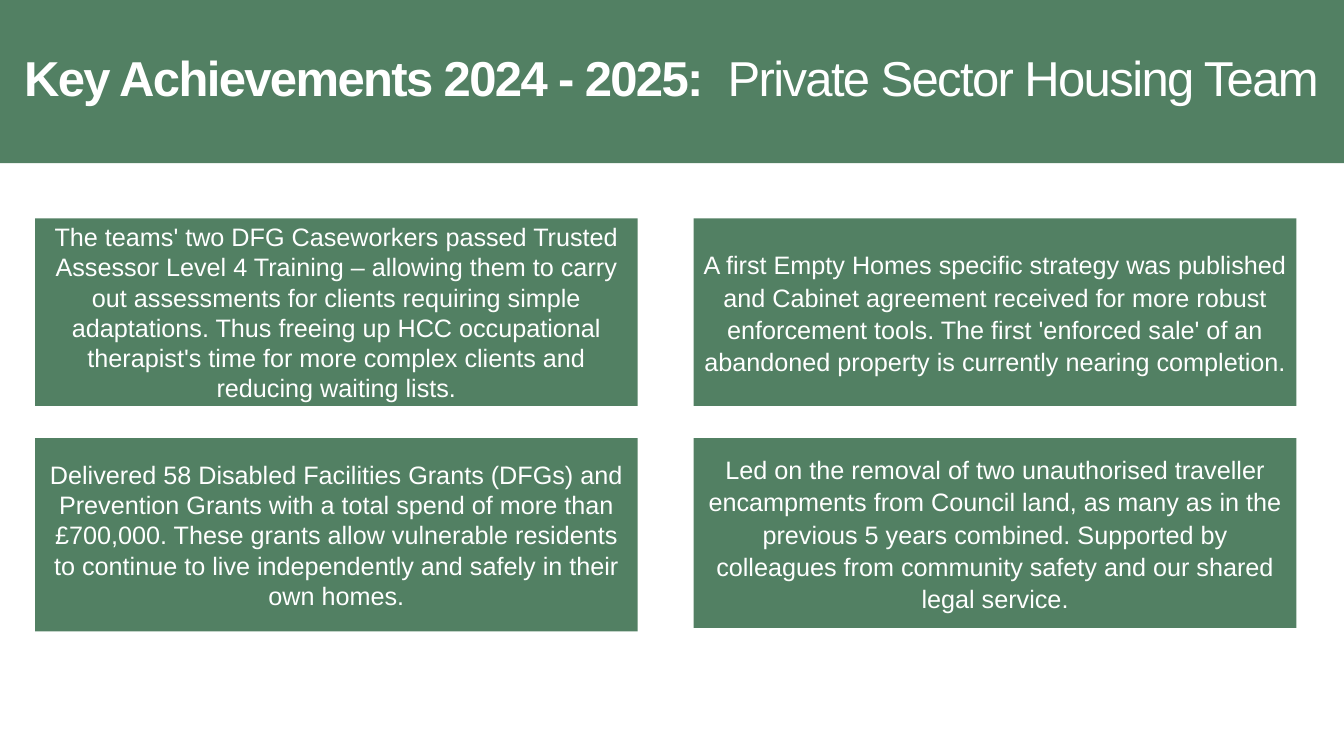
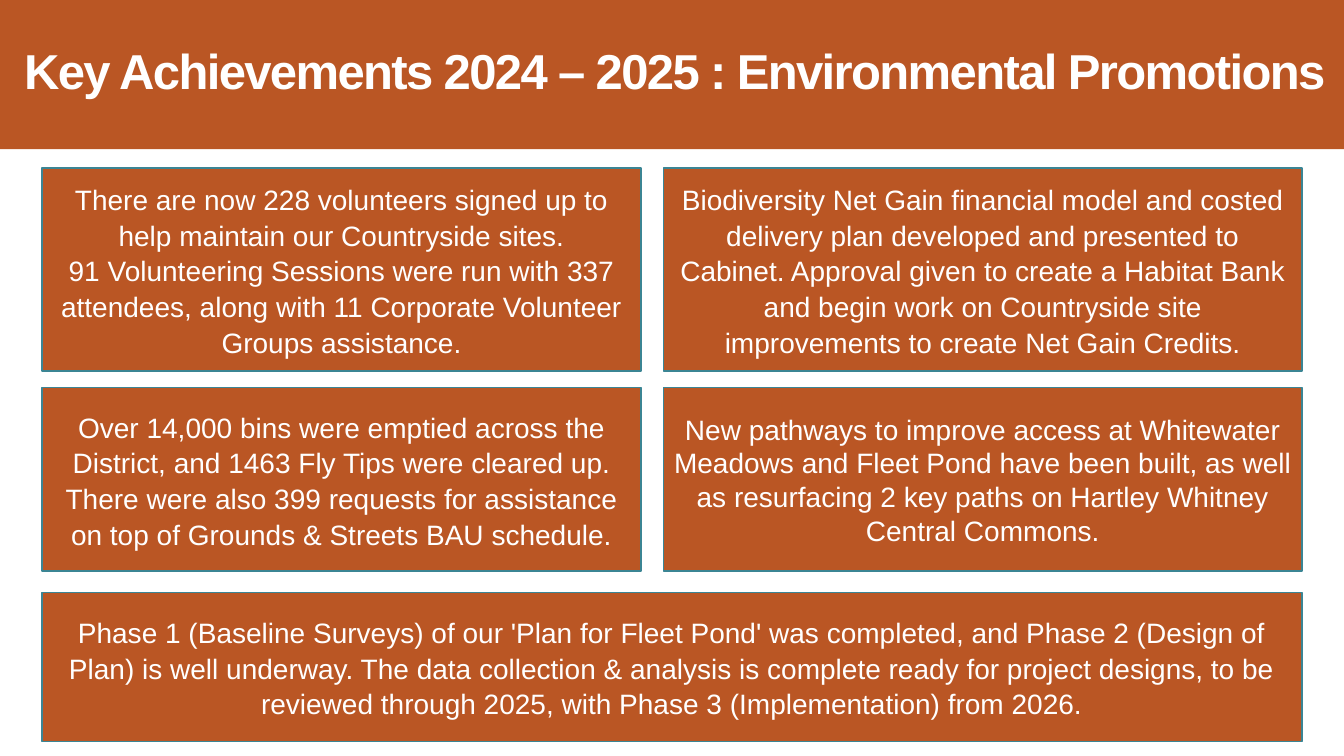
from collections import namedtuple
from pptx import Presentation
from pptx.dml.color import RGBColor
from pptx.enum.shapes import MSO_SHAPE as Preset
from pptx.enum.text import MSO_ANCHOR as Anchor, MSO_AUTO_SIZE as AutoSize, PP_ALIGN as Align
from pptx.util import Pt

COLORS = {"housing": "528063", "environment": "BA5624", "outline": "3B8594", "text": "FFFFFF"}
FONT = "Arial"
WIDTH, HEIGHT = 960, 540
TITLE_ONLY = 5

Box = namedtuple("Box", "left top width height")
Style = namedtuple("Style", "fill outline size")
Spacing = namedtuple("Spacing", "line after")

SINGLE = Spacing(1.0, 0)
RELAXED = Spacing(1.07, 8)
FIXED = Spacing(Pt(25.5), 0)


def rgb(name):
    return RGBColor.from_string(COLORS[name])


def add_run(paragraph, text, size, bold=False):
    run = paragraph.add_run()
    run.text = text
    run.font.name = FONT
    run.font.size = Pt(size)
    run.font.bold = bold
    run.font.color.rgb = rgb("text")
    return run


def add_panel(slide, box, fill, outline=None):
    panel = slide.shapes.add_shape(Preset.RECTANGLE, *map(Pt, box))
    panel.shadow.inherit = False
    panel.fill.solid()
    panel.fill.fore_color.rgb = rgb(fill)
    if outline:
        panel.line.color.rgb = rgb(outline)
        panel.line.width = Pt(1)
    else:
        panel.line.fill.background()
    return panel


def add_header(slide, box, fill, title_parts):
    band = add_panel(slide, box, fill)
    title = slide.shapes.title
    title.element.addprevious(band.element)
    title.left, title.top = Pt(box.left + 10), Pt(box.top + 6.5)
    title.width, title.height = Pt(box.width - 10), Pt(box.height - 13)
    frame = title.text_frame
    frame.auto_size = AutoSize.NONE
    frame.word_wrap = True
    frame.vertical_anchor = Anchor.MIDDLE
    heading = frame.paragraphs[0]
    heading.alignment = Align.LEFT
    heading.line_spacing = 0.85
    for text, bold in title_parts:
        run = add_run(heading, text, 35, bold)
        run.font._element.set("spc", "-120")


def add_card(slide, box, style, spacing, *texts):
    frame = add_panel(slide, box, style.fill, style.outline).text_frame
    frame.word_wrap = True
    frame.vertical_anchor = Anchor.MIDDLE
    for index, text in enumerate(texts):
        paragraph = frame.add_paragraph() if index else frame.paragraphs[0]
        paragraph.alignment = Align.CENTER
        paragraph.line_spacing = spacing.line
        paragraph.space_after = Pt(spacing.after)
        add_run(paragraph, text, style.size)


def add_achievements(deck, header_height, style, title_parts, cards):
    slide = deck.slides.add_slide(deck.slide_layouts[TITLE_ONLY])
    add_header(slide, Box(0, 0, WIDTH, header_height), style.fill, title_parts)
    for box, spacing, *texts in cards:
        add_card(slide, box, style, spacing, *texts)


def add_housing(deck, area):
    card_width = (area.width - 40) / 2
    right = area.left + card_width + 40
    lower = area.top + 157
    add_achievements(
        deck, 116.5, Style("housing", None, 18),
        [("Key Achievements 2024 - 2025:  ", True), ("Private Sector Housing Team", False)],
        [
            (Box(area.left, area.top, card_width, 134), SINGLE,
             "The teams' two DFG Caseworkers passed Trusted Assessor Level 4 Training – allowing them "
             "to carry out assessments for clients requiring simple adaptations. Thus freeing up HCC "
             "occupational therapist's time for more complex clients and reducing waiting lists."),
            (Box(right, area.top, card_width, 134), RELAXED,
             "A first Empty Homes specific strategy was published and Cabinet agreement received for "
             "more robust enforcement tools. The first 'enforced sale' of an abandoned property is "
             "currently nearing completion."),
            (Box(area.left, lower, card_width, 138), SINGLE,
             "Delivered 58 Disabled Facilities Grants (DFGs) and Prevention Grants with a total spend "
             "of more than £700,000. These grants allow vulnerable residents to continue to live "
             "independently and safely in their own homes."),
            (Box(right, lower, card_width, 135.5), RELAXED,
             "Led on the removal of two unauthorised traveller encampments from Council land, as many "
             "as in the previous 5 years combined. Supported by colleagues from community safety and "
             "our shared legal service."),
        ])


def add_environment(deck, area):
    left_width, right_width = 428, 456
    right = area.left + area.width - right_width
    middle, lower = area.top + 157, area.top + 303
    add_achievements(
        deck, 106.5, Style("environment", "outline", 20),
        [("Key Achievements 2024 – 2025 : Environmental Promotions", True)],
        [
            (Box(area.left, area.top, left_width, 145), FIXED,
             "There are now 228 volunteers signed up to help maintain our Countryside sites.",
             "91 Volunteering Sessions were run with 337 attendees, along with 11 Corporate Volunteer "
             "Groups assistance."),
            (Box(right, area.top, right_width, 145), FIXED,
             "Biodiversity Net Gain financial model and costed delivery plan developed and presented "
             "to Cabinet. Approval given to create a Habitat Bank and begin work on Countryside site "
             "improvements to create Net Gain Credits."),
            (Box(area.left, middle, left_width, 131), FIXED,
             "Over 14,000 bins were emptied across the District, and 1463 Fly Tips were cleared up. "
             "There were also 399 requests for assistance on top of Grounds & Streets BAU schedule."),
            (Box(right, middle, right_width, 131), SINGLE,
             "New pathways to improve access at Whitewater Meadows and Fleet Pond have been built, as "
             "well as resurfacing 2 key paths on Hartley Whitney Central Commons."),
            (Box(area.left, lower, area.width, 106.5), FIXED,
             "Phase 1 (Baseline Surveys) of our 'Plan for Fleet Pond' was completed, and Phase 2 "
             "(Design of Plan) is well underway. The data collection & analysis is complete ready for "
             "project designs, to be reviewed through 2025, with Phase 3 (Implementation) from 2026."),
        ])


def main():
    deck = Presentation()
    deck.slide_width, deck.slide_height = Pt(WIDTH), Pt(HEIGHT)
    add_housing(deck, Box(25, 156, 901, 295))
    add_environment(deck, Box(30, 120, 900, 410))
    deck.save("out.pptx")


if __name__ == "__main__":
    main()
